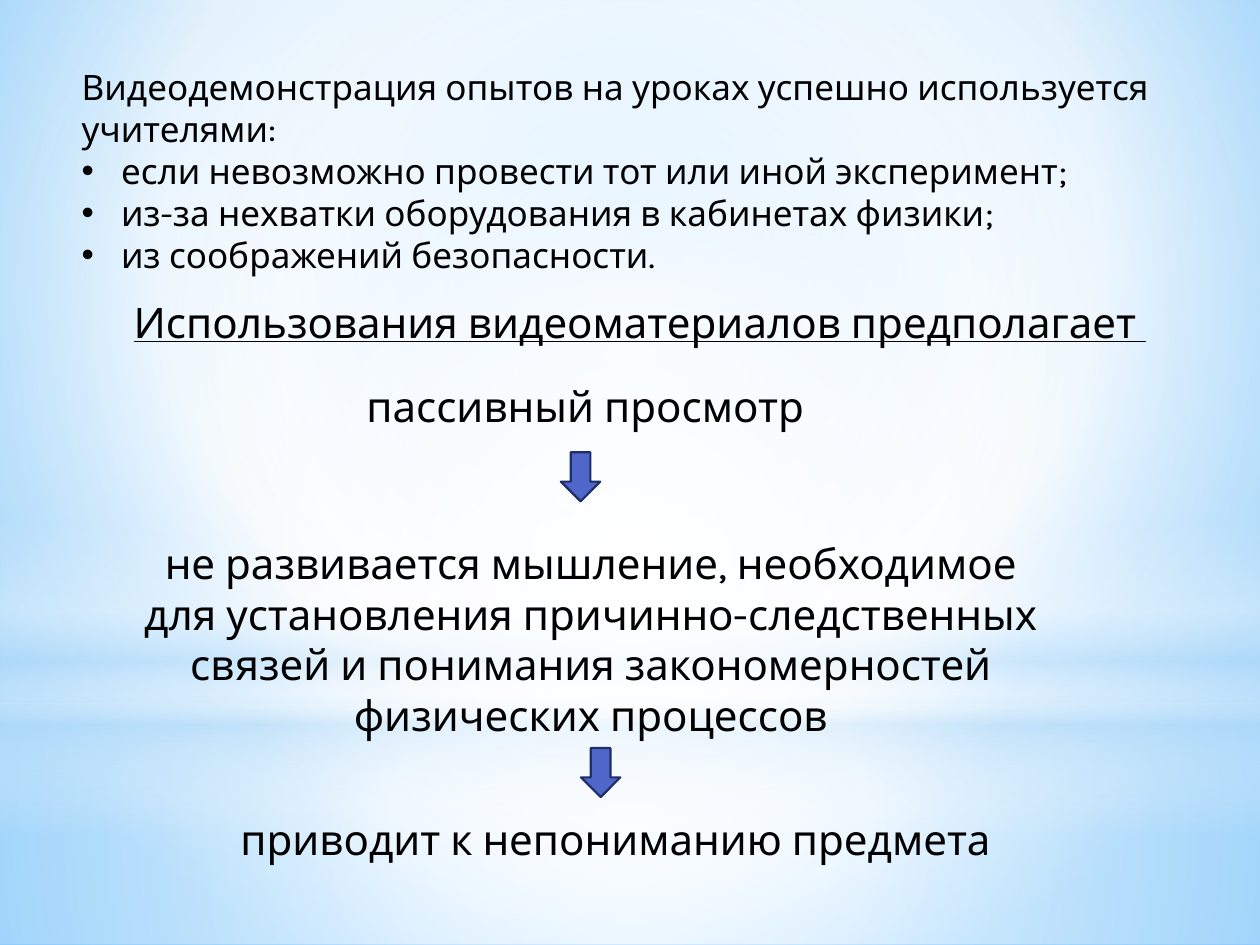
from lxml import etree
from pptx import Presentation
from pptx.dml.color import RGBColor
from pptx.enum.shapes import MSO_SHAPE
from pptx.enum.text import MSO_AUTO_SIZE, PP_ALIGN
from pptx.oxml.ns import qn
from pptx.util import Pt

RECTANGLE, OVAL, DOWN_ARROW = MSO_SHAPE.RECTANGLE, MSO_SHAPE.OVAL, MSO_SHAPE.DOWN_ARROW
LEFT, CENTER = PP_ALIGN.LEFT, PP_ALIGN.CENTER
FIXED = MSO_AUTO_SIZE.NONE

COLORS = {
    "text": "000000",
    "white": "FFFFFF",
    "sky": "9ED5FF",
    "deep_sky": "5BB9FF",
    "haze": "B4DCFA",
    "arrow": "4E67C8",
    "arrow_line": "1F2E69",
}
MIDDLE = (50, 50, 50, 50)
BODY, LARGE = 20, 24
BULLET_INDENT = 22.5


def color(name):
    return RGBColor.from_string(COLORS[name])


class SlideBuilder:
    def __init__(self, deck, font):
        self.slide = deck.slides.add_slide(deck.slide_layouts[6])
        self.font = font

    def gradient(self, fill, element, stops, focus=None):
        fill.gradient()
        node = element.find(".//" + qn("a:gradFill"))
        for child in list(node):
            node.remove(child)
        stop_list = etree.SubElement(node, qn("a:gsLst"))
        for position, name, opacity in stops:
            stop = etree.SubElement(stop_list, qn("a:gs"), pos=str(position * 1000))
            tint = etree.SubElement(stop, qn("a:srgbClr"), val=COLORS[name])
            if opacity < 100:
                etree.SubElement(tint, qn("a:alpha"), val=str(opacity * 1000))
        if focus:
            shade = etree.SubElement(node, qn("a:path"), path="circle")
            sides = {side: str(share * 1000) for side, share in zip("ltrb", focus)}
            etree.SubElement(shade, qn("a:fillToRect"), **sides)
        else:
            etree.SubElement(node, qn("a:lin"), ang="5400000", scaled="0")

    def background(self, stops, focus):
        self.gradient(self.slide.background.fill, self.slide.element, stops, focus)

    def shape(self, kind, *bounds):
        shape = self.slide.shapes.add_shape(kind, *map(Pt, bounds))
        shape.shadow.inherit = False
        return shape

    def glow(self, kind, top, height, stops, focus=None):
        shape = self.shape(kind, 0, top, 720, height)
        shape.line.fill.background()
        self.gradient(shape.fill, shape.element, stops, focus)

    def arrow(self, left, top):
        shape = self.shape(DOWN_ARROW, left, top, 22.5, 28)
        shape.fill.solid()
        shape.fill.fore_color.rgb = color("arrow")
        shape.line.color.rgb = color("arrow_line")
        shape.line.width = Pt(1.25)

    def text(self, bounds, paragraphs):
        box = self.slide.shapes.add_textbox(*map(Pt, bounds))
        frame = box.text_frame
        frame.word_wrap = True
        frame.auto_size = FIXED
        for index, (words, style) in enumerate(paragraphs):
            para = frame.paragraphs[0] if index == 0 else frame.add_paragraph()
            para.alignment = style.get("align", LEFT)
            para.space_before = Pt(style.get("before", 0))
            if style.get("bullet"):
                self.bullet(para)
            span = para.add_run()
            span.text = words
            span.font.color.rgb = color("text")
            formats = {
                "name": self.font,
                "size": Pt(style["size"]),
                "underline": style.get("underline", False),
            }
            for name, value in formats.items():
                setattr(span.font, name, value)

    def bullet(self, para):
        properties = para._p.get_or_add_pPr()
        properties.set("marL", str(Pt(BULLET_INDENT)))
        properties.set("indent", str(-Pt(BULLET_INDENT)))
        etree.SubElement(properties, qn("a:buFont"), typeface="Arial")
        etree.SubElement(properties, qn("a:buChar"), char="•")


def main():
    deck = Presentation()
    deck.slide_width, deck.slide_height = Pt(720), Pt(540)
    page = SlideBuilder(deck, "Karla")

    page.background(
        [(0, "sky", 100), (60, "white", 100), (100, "deep_sky", 100)], (20, 10, 20, 60)
    )
    page.glow(RECTANGLE, 402, 138,
              [(0, "white", 91), (37, "white", 76), (100, "haze", 79)], MIDDLE)
    page.glow(RECTANGLE, 0, 402,
              [(0, "white", 89), (48, "white", 62), (100, "haze", 79)], MIDDLE)
    page.glow(RECTANGLE, 297, 180,
              [(0, "white", 0), (29, "white", 30), (45, "haze", 40),
               (55, "white", 26), (65, "haze", 60), (100, "white", 0)])
    page.glow(OVAL, 126, 402, [(0, "white", 100), (56, "white", 0)], MIDDLE)

    body = {"size": BODY}
    item = {"size": BODY, "bullet": True}
    heading = {"size": LARGE, "align": CENTER, "underline": True, "before": 12}
    statement = {"size": LARGE, "align": CENTER}

    page.text((39.6, 34, 652.3, 234.7), [
        ("Видеодемонстрация опытов на уроках успешно используется учителями:", body),
        ("если невозможно провести тот или иной эксперимент;", item),
        ("из-за нехватки оборудования в кабинетах физики;", item),
        ("из соображений безопасности.", item),
        ("Использования видеоматериалов предполагает ", heading),
    ])
    page.arrow(320.5, 258.5)
    page.text((202.3, 213.8, 264.2, 36), [("пассивный просмотр", statement)])
    page.text((73.4, 303.8, 528.5, 123.8), [
        ("не развивается мышление, необходимое для установления "
         "причинно-следственных связей и понимания закономерностей "
         "физических процессов", statement),
    ])
    page.arrow(332, 427.5)
    page.text((95.8, 461.5, 512, 36), [("приводит к непониманию предмета", statement)])

    deck.save("out.pptx")


if __name__ == "__main__":
    main()
